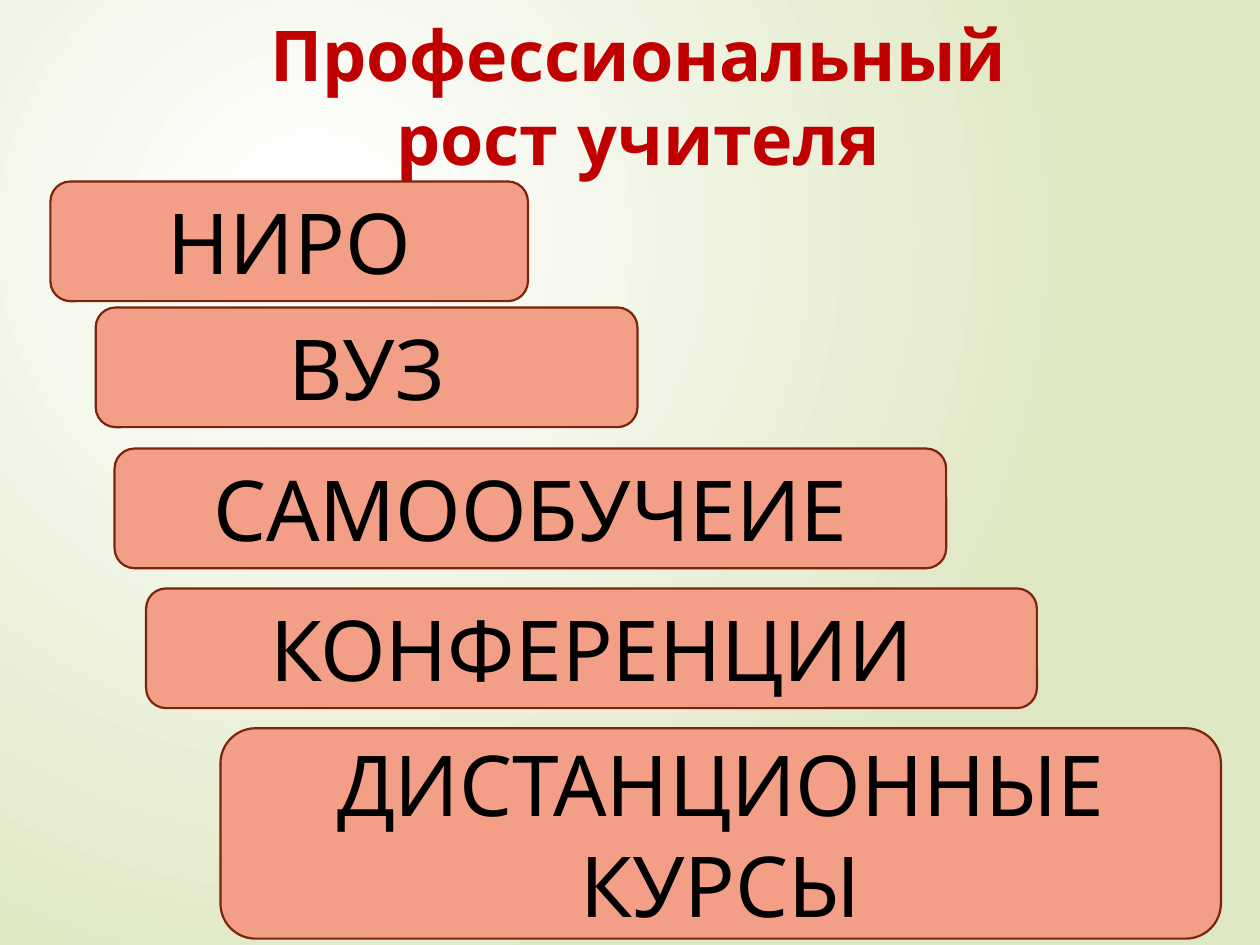
from lxml import etree
from pptx import Presentation
from pptx.dml.color import RGBColor
from pptx.enum.shapes import MSO_SHAPE
from pptx.enum.text import MSO_ANCHOR, MSO_AUTO_SIZE, PP_ALIGN
from pptx.oxml import parse_xml
from pptx.oxml.ns import nsdecls, qn
from pptx.util import Inches, Pt

ROUNDED = MSO_SHAPE.FLOWCHART_ALTERNATE_PROCESS
TOP, MIDDLE = MSO_ANCHOR.TOP, MSO_ANCHOR.MIDDLE
CENTER = PP_ALIGN.CENTER
NO_AUTOFIT = MSO_AUTO_SIZE.NONE

FONT = "Quicksand"
WHITE = RGBColor(0xFF, 0xFF, 0xFF)
PALE_GREEN = RGBColor(0xDF, 0xE8, 0xC4)
SALMON = RGBColor(0xF3, 0x9E, 0x87)
BROWN = RGBColor(0x7A, 0x24, 0x0C)
BLACK = RGBColor(0, 0, 0)
RED = RGBColor(0xC0, 0, 0)

TITLE = "Профессиональный рост учителя"
STEP_HEIGHT = 0.95
STEPS = [  # text, left, top, width, height in inches
    ("НИРО", 0.4, 1.44, 3.79, STEP_HEIGHT),
    ("ВУЗ", 0.76, 2.44, 4.3, STEP_HEIGHT),
    ("САМООБУЧЕИЕ", 0.91, 3.56, 6.6, STEP_HEIGHT),
    ("КОНФЕРЕНЦИИ", 1.16, 4.67, 7.07, STEP_HEIGHT),
    ("ДИСТАНЦИОННЫЕ КУРСЫ", 1.75, 5.78, 7.94, 1.67),
]


def write_text(shape, text, size, color, bold=False, anchor=MIDDLE, outline=None):
    frame = shape.text_frame
    frame.word_wrap = True
    frame.auto_size = NO_AUTOFIT
    frame.vertical_anchor = anchor
    para = frame.paragraphs[0]
    para.alignment = CENTER
    span = para.add_run()
    span.text = text
    font = span.font
    font.name, font.size, font.bold = FONT, Pt(size), bold
    font.color.rgb = color
    if outline:
        span_format = span._r.get_or_add_rPr()
        span_format.insert(0, parse_xml(
            f'<a:ln {nsdecls("a")} w="{Pt(outline)}"><a:solidFill>'
            f'<a:srgbClr val="{color}"/></a:solidFill></a:ln>'))


def paint_background(page):
    """Fill the page with a circular gradient centred up and to the left."""
    fill = page.background.fill
    fill.gradient()
    stops = zip(fill.gradient_stops, (0.04, 1), (WHITE, PALE_GREEN))
    for stop, position, color in stops:
        stop.position = position
        stop.color.rgb = color
    gradient = next(page._element.iter(qn("a:gradFill")))
    gradient.remove(gradient.find(qn("a:lin")))
    circle = etree.SubElement(gradient, qn("a:path"), path="circle")
    etree.SubElement(circle, qn("a:fillToRect"),
                     l="50000", t="50000", r="100000", b="100000")


def place_title(page, left, top, width, height):
    title = page.shapes.title
    title.left, title.top = Inches(left), Inches(top)
    title.width, title.height = Inches(width), Inches(height)
    write_text(title, TITLE, size=40, color=RED, bold=True, anchor=TOP)


def add_step(page, text, left, top, width, height):
    box = page.shapes.add_shape(ROUNDED, Inches(left), Inches(top),
                                Inches(width), Inches(height))
    box.shadow.inherit = False
    box.fill.solid()
    box.fill.fore_color.rgb = SALMON
    box.line.color.rgb = BROWN
    box.line.width = Pt(1.25)
    write_text(box, text, size=48, color=BLACK, outline=1.75)


def main():
    deck = Presentation()
    deck.slide_width, deck.slide_height = Inches(10), Inches(7.5)
    page = deck.slides.add_slide(deck.slide_layouts[5])
    paint_background(page)
    place_title(page, 1.46, 0.04, 7.21, 1.4)
    for step in STEPS:
        add_step(page, *step)
    deck.save("out.pptx")


if __name__ == "__main__":
    main()
